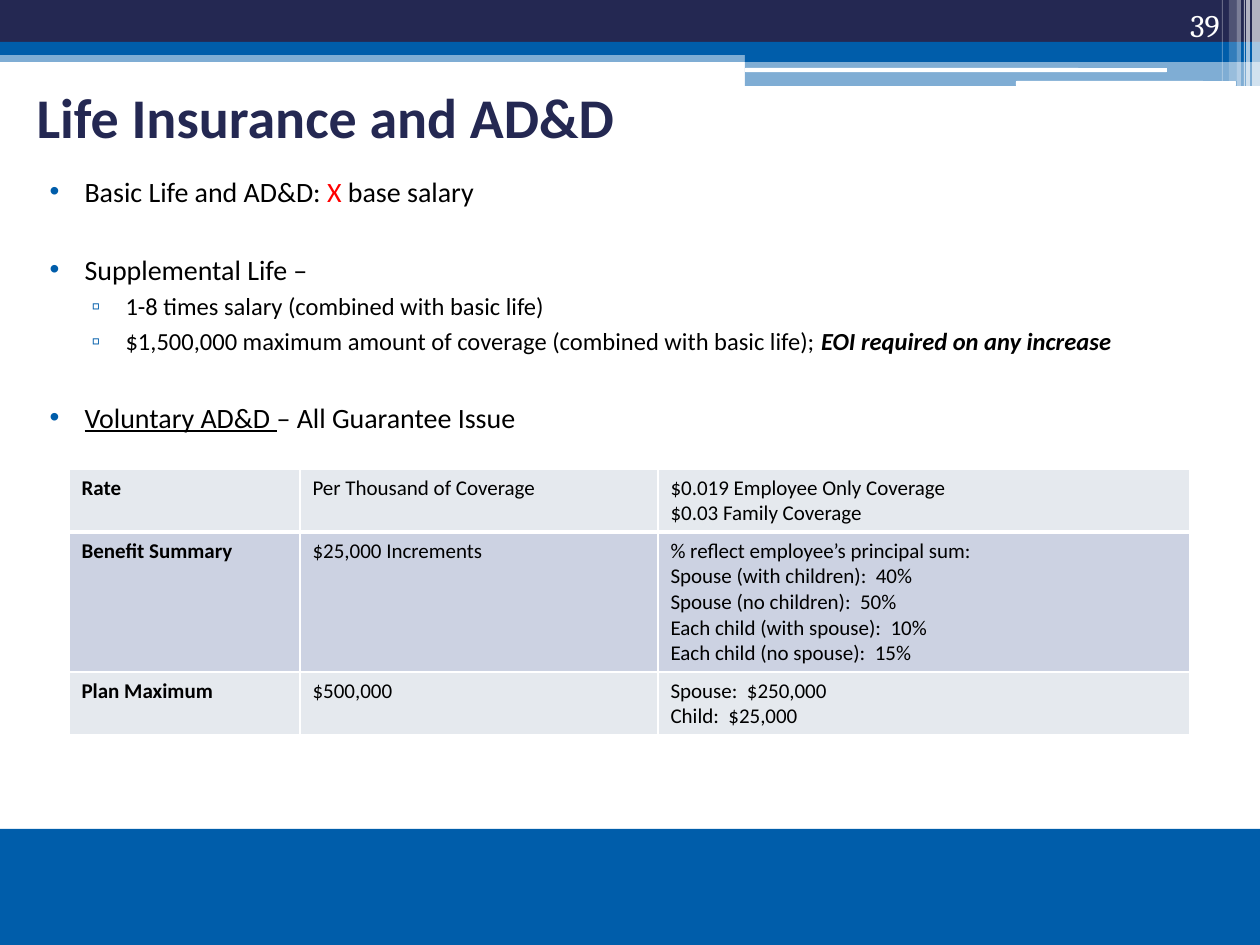
from lxml import etree
from pptx import Presentation
from pptx.dml.color import RGBColor
from pptx.enum.shapes import MSO_SHAPE
from pptx.enum.text import MSO_ANCHOR, MSO_AUTO_SIZE, PP_ALIGN
from pptx.oxml.ns import qn
from pptx.util import Emu, Pt

RECT, ROUNDED = MSO_SHAPE.RECTANGLE, MSO_SHAPE.ROUNDED_RECTANGLE
TOP, MIDDLE, BOTTOM = MSO_ANCHOR.TOP, MSO_ANCHOR.MIDDLE, MSO_ANCHOR.BOTTOM
LEFT, RIGHT = PP_ALIGN.LEFT, PP_ALIGN.RIGHT
NO_AUTOFIT = MSO_AUTO_SIZE.NONE

EMU_PER_PX = 914400 / 126
COLORS = {"navy": "242852", "blue": "005DAA", "white": "FFFFFF", "black": "000000",
          "red": "FF0000", "pale": "E5E9EE", "lavender": "CCD2E2"}


def px(length):
    return Emu(round(length * EMU_PER_PX))


def rgb(name):
    return RGBColor.from_string(COLORS[name])


def add_solid_fill(parent, color):
    fill = etree.SubElement(parent, qn("a:solidFill"))
    etree.SubElement(fill, qn("a:srgbClr"), val=COLORS[color])


class SlideBuilder:
    """Holds the slide and the shared text style."""

    def __init__(self, slide, font="Calibri"):
        self.slide = slide
        self.font = font

    def style(self, paragraph, size, color="black", bold=False, font=None, align=LEFT):
        paragraph.alignment = align
        paragraph.font.name = font or self.font
        paragraph.font.size = Pt(size)
        paragraph.font.bold = bold
        paragraph.font.color.rgb = rgb(color)

    def bar(self, box, color, opacity=100, kind=RECT):
        bar = self.slide.shapes.add_shape(kind, *map(px, box))
        bar.shadow.inherit = False
        bar.fill.solid()
        bar.fill.fore_color.rgb = rgb(color)
        bar.line.fill.background()
        if opacity < 100:
            tint = bar.fill._xPr.find(".//" + qn("a:srgbClr"))
            etree.SubElement(tint, qn("a:alpha"), val=str(opacity * 1000))

    def placeholder(self, index, box, anchor):
        """Move a template placeholder in front of the bars and return its text frame."""
        holder = self.slide.placeholders[index]
        holder.left, holder.top, holder.width, holder.height = map(px, box)
        self.slide.shapes._spTree.append(holder._element)
        frame = holder.text_frame
        frame.auto_size = NO_AUTOFIT
        frame.vertical_anchor = anchor
        return frame

    def title(self, text, box):
        frame = self.placeholder(0, box, MIDDLE)
        frame.text = text
        self.style(frame.paragraphs[0], 32, "navy", bold=True)

    def bullets(self, items, box):
        """Each item is (level, space before in points, [(text, run format)])."""
        frame = self.placeholder(1, box, TOP)
        for number, (level, space, runs) in enumerate(items):
            paragraph = frame.add_paragraph() if number else frame.paragraphs[0]
            paragraph.level = level
            indent, hanging, mark, size = [(50, 35, "•", 16), (91, 34, "▫", 14)][level]
            props = paragraph._p.get_or_add_pPr()
            props.set("marL", str(px(indent)))
            props.set("indent", str(px(-hanging)))
            bullet_color = etree.SubElement(props, qn("a:buClr"))
            etree.SubElement(bullet_color, qn("a:srgbClr"), val=COLORS["blue"])
            etree.SubElement(props, qn("a:buFont"), typeface="Arial")
            etree.SubElement(props, qn("a:buChar"), char=mark)
            paragraph.space_before = Pt(space)
            self.style(paragraph, size)
            for text, changes in runs:
                run = paragraph.add_run()
                run.text = text
                for attribute, value in changes.items():
                    if attribute == "color":
                        run.font.color.rgb = rgb(value)
                    else:
                        setattr(run.font, attribute, value)

    def page_number(self, text, box):
        frame = self.slide.shapes.add_textbox(*map(px, box)).text_frame
        frame.word_wrap = True
        frame.vertical_anchor = BOTTOM
        frame.text = text
        self.style(frame.paragraphs[0], 18, "white", font="Cambria", align=RIGHT)

    def table(self, rows, left, top, widths, heights):
        table = self.slide.shapes.add_table(
            len(rows), len(widths), px(left), px(top), px(sum(widths)), px(sum(heights))).table
        table.first_row = table.horz_banding = False
        for column, width in zip(table.columns, widths):
            column.width = px(width)
        for r, (row, height) in enumerate(zip(rows, heights)):
            table.rows[r].height = px(height)
            for c, text in enumerate(row):
                cell = table.cell(r, c)
                self.borders(cell, top=3 if r == 1 else 1, bottom=3 if r == 0 else 1)
                cell.fill.solid()
                cell.fill.fore_color.rgb = rgb("lavender" if r % 2 else "pale")
                cell.text = text
                for paragraph in cell.text_frame.paragraphs:
                    self.style(paragraph, 12, bold=c == 0)

    def borders(self, cell, top, bottom):
        props = cell._tc.get_or_add_tcPr()
        for side, width in (("L", 1), ("R", 1), ("T", top), ("B", bottom)):
            line = etree.SubElement(props, qn("a:ln" + side), w=str(Pt(width)))
            add_solid_fill(line, "white")


def main():
    deck = Presentation()
    deck.slide_width, deck.slide_height = px(1260), px(945)
    page = SlideBuilder(deck.slides.add_slide(deck.slide_layouts[1]))

    page.bar((0, 50, 1260, 12), "blue", 50)
    page.bar((0, 0, 1260, 43), "navy")
    page.bar((0, 42, 1260, 13), "blue")
    page.bar((745, 49, 515, 13), "blue")
    page.bar((745, 61, 515, 25), "blue", 50)
    page.bar((745, 68, 422, 4), "white", kind=ROUNDED)
    page.bar((1016, 81, 220, 5), "white", kind=ROUNDED)
    for left, width, height, opacity in [(1252, 8, 86, 65), (1246, 4, 86, 65), (1244, 1, 86, 60),
                                         (1237, 4, 86, 40), (1229, 8, 81, 20), (1222, 1, 81, 30)]:
        page.bar((left, 0, width, height), "white", opacity)
    page.bar((0, 829, 1260, 116), "blue")

    page.title("Life Insurance and AD&D", (24, 61, 1050, 110))
    section_gap = 25.5
    page.bullets([
        (0, 0, [("Basic Life and AD&D: ", {}), ("X", {"color": "red"}), (" base salary", {})]),
        (0, section_gap, [("Supplemental Life –", {})]),
        (1, 3, [("1-8 times salary (combined with basic life)", {})]),
        (1, 3, [("$1,500,000 maximum amount of coverage (combined with basic life); ", {}),
                ("EOI required on any increase", {"bold": True, "italic": True})]),
        (0, section_gap, [("Voluntary AD&D ", {"underline": True}),
                          ("– All Guarantee Issue", {})]),
    ], (22, 168, 1205, 714))
    page.page_number("39", (1127, 0, 105, 50))

    page.table([
        ("Rate", "Per Thousand of Coverage",
         "$0.019 Employee Only Coverage\n$0.03 Family Coverage"),
        ("Benefit Summary", "$25,000 Increments",
         "% reflect employee’s principal sum:\nSpouse (with children):  40%\n"
         "Spouse (no children):  50%\nEach child (with spouse):  10%\n"
         "Each child (no spouse):  15%"),
        ("Plan Maximum", "$500,000", "Spouse:  $250,000\nChild:  $25,000"),
    ], 69, 469, widths=(231, 358, 532), heights=(63, 140, 63))

    deck.save("out.pptx")


if __name__ == "__main__":
    main()
